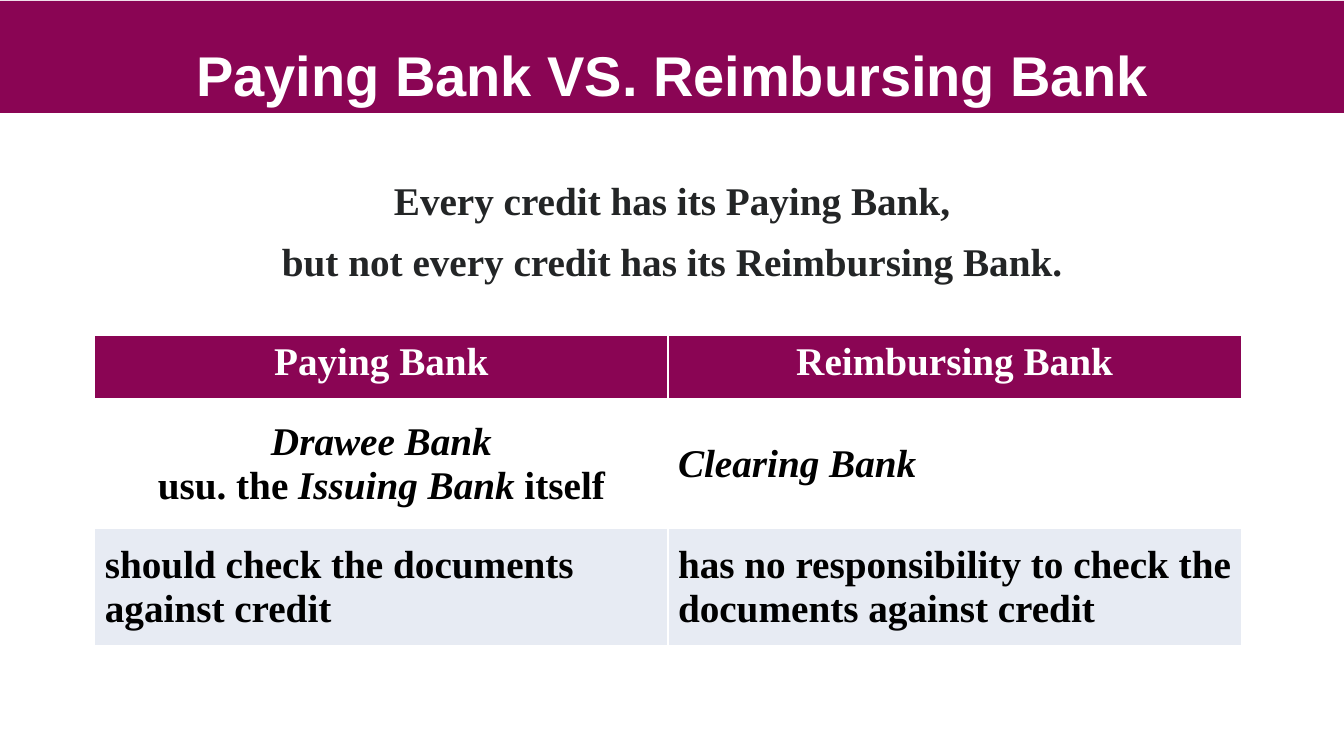
"""Build the slide comparing the paying bank with the reimbursing bank."""
from dataclasses import dataclass

from lxml.etree import SubElement
from pptx import Presentation
from pptx.dml.color import RGBColor
from pptx.enum.shapes import MSO_SHAPE as Shape
from pptx.enum.text import MSO_ANCHOR as Anchor, PP_ALIGN as Align
from pptx.oxml.ns import qn
from pptx.table import _Cell as Cell
from pptx.text.text import TextFrame, _Paragraph as Paragraph
from pptx.util import Inches, Pt

PLUM, WHITE, BLACK, CHARCOAL, PALE = "8A0554", "FFFFFF", "000000", "232526", "E7EBF3"
SERIF = "Times New Roman"


@dataclass(frozen=True)
class Phrase:
    text: str
    italic: bool = False


@dataclass(frozen=True)
class Entry:
    lines: tuple[tuple[Phrase, ...], ...]
    align: Align = Align.LEFT


@dataclass(frozen=True)
class Row:
    height: float
    fill: str
    color: str
    anchor: Anchor
    entries: tuple[Entry, ...]


def rgb(color: str) -> RGBColor:
    return RGBColor.from_string(color)


def style(paragraph: Paragraph, color: str, align: Align, size: int = 28, face: str = SERIF) -> None:
    paragraph.alignment = align
    font = paragraph.font
    font.name, font.size, font.bold = face, Pt(size), True
    font.color.rgb = rgb(color)


def write_lines(frame: TextFrame, entry: Entry, color: str) -> None:
    for index, phrases in enumerate(entry.lines):
        paragraph = frame.add_paragraph() if index else frame.paragraphs[0]
        for phrase in phrases:
            run = paragraph.add_run()
            run.text = phrase.text
            if len(phrases) > 1:
                run.font.italic = phrase.italic
        style(paragraph, color, entry.align)
        if len(phrases) == 1:
            paragraph.font.italic = phrases[0].italic


def draw_borders(cell: Cell, bottom: float) -> None:
    properties = cell._tc.get_or_add_tcPr()
    for index, (side, width) in enumerate((("L", 1), ("R", 1), ("T", 1), ("B", bottom))):
        line = properties.makeelement(qn(f"a:ln{side}"), {"w": str(Pt(width))})
        fill = SubElement(line, qn("a:solidFill"))
        SubElement(fill, qn("a:srgbClr"), val=WHITE)
        properties.insert(index, line)


ROWS = (
    Row(0.64, PLUM, WHITE, Anchor.TOP, (
        Entry(((Phrase("Paying Bank"),),), Align.CENTER),
        Entry(((Phrase("Reimbursing Bank"),),), Align.CENTER),
    )),
    Row(1.27, WHITE, BLACK, Anchor.MIDDLE, (
        Entry((
            (Phrase("Drawee Bank", True),),
            (Phrase("usu. the"), Phrase(" Issuing Bank", True), Phrase(" itself")),
        ), Align.CENTER),
        Entry(((Phrase("Clearing Bank", True),),)),
    )),
    Row(1.17, PALE, BLACK, Anchor.MIDDLE, (
        Entry(((Phrase("should check the documents against credit"),),)),
        Entry(((Phrase("has no responsibility to check the documents against credit"),),)),
    )),
)
STATEMENT = Entry((
    (Phrase("Every credit has its Paying Bank,"),),
    (Phrase("but not every credit has its Reimbursing Bank."),),
), Align.CENTER)


def main() -> None:
    deck = Presentation()
    deck.slide_width, deck.slide_height = Inches(13.33), Inches(7.5)
    shapes = deck.slides.add_slide(deck.slide_layouts[6]).shapes

    banner = shapes.add_shape(Shape.RECTANGLE, Inches(-0.01), Inches(0.01), Inches(13.35), Inches(1.11))
    banner.shadow.inherit = False
    banner.fill.solid()
    banner.fill.fore_color.rgb = rgb(PLUM)
    banner.line.fill.background()
    banner.text_frame.word_wrap = True
    banner.text_frame.vertical_anchor = Anchor.MIDDLE
    title = banner.text_frame.paragraphs[0]
    title.text = "Paying Bank VS. Reimbursing Bank"
    title.line_spacing = 1.5
    style(title, WHITE, Align.CENTER, 40, "Arial")

    statement = shapes.add_textbox(Inches(1.29), Inches(1.56), Inches(10.75), Inches(1.32)).text_frame
    statement.word_wrap = True
    write_lines(statement, STATEMENT, CHARCOAL)
    for paragraph in statement.paragraphs:
        paragraph.line_spacing = 1.3

    height = sum(row.height for row in ROWS)
    table = shapes.add_table(len(ROWS), 2, Inches(0.94), Inches(3.33), Inches(11.37), Inches(height)).table
    for column in table.columns:
        column.width = Inches(5.685)
    for index, row in enumerate(ROWS):
        table.rows[index].height = Inches(row.height)
        for cell, entry in zip(table.rows[index].cells, row.entries):
            cell.fill.solid()
            cell.fill.fore_color.rgb = rgb(row.fill)
            cell.vertical_anchor = row.anchor
            draw_borders(cell, 1 if index else 3)
            write_lines(cell.text_frame, entry, row.color)

    deck.save("out.pptx")


if __name__ == "__main__":
    main()
